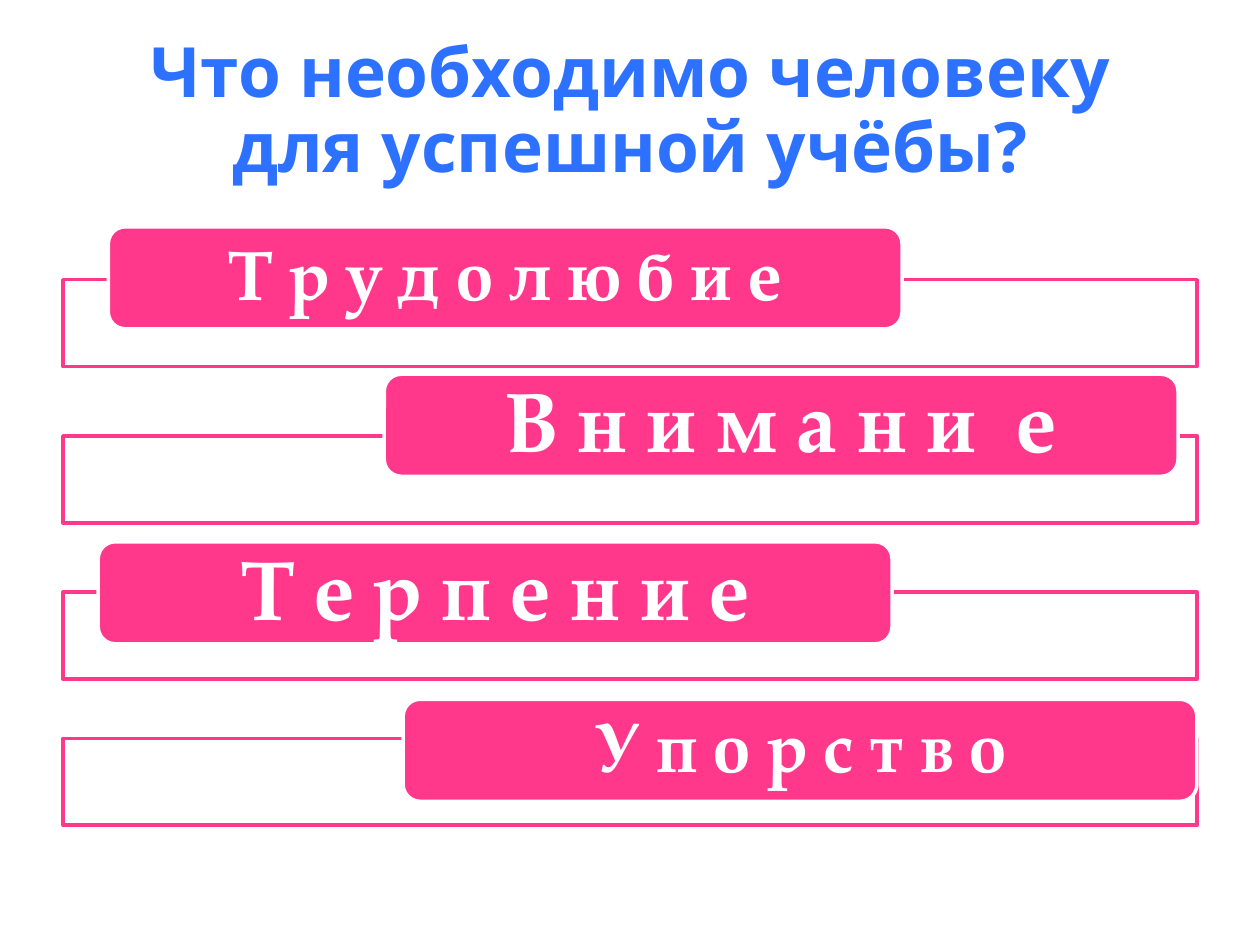
from pptx import Presentation
from pptx.dml.color import RGBColor
from pptx.enum import shapes, text
from pptx.oxml.ns import qn
from pptx.util import Inches, Pt
from lxml import etree

PINK, BLUE, WHITE = "FF388C", "2C71FF", "FFFFFF"
TITLE_FONT, LABEL_FONT = "Noto Sans", "TeX Gyre Pagella"

# label, text size, frame top, label left, label top
QUALITIES = [
    ("Т р у д о л ю б и е", 40, 2.22, 0.86, 1.8),
    ("В н и м а н и  е", 48, 3.46, 3.05, 2.97),
    ("Т е р п е н и е", 48, 4.7, 0.78, 4.3),
    ("У п о р с т в о", 40, 5.86, 3.2, 5.55),
]


def color(hex_value):
    return RGBColor.from_string(hex_value)


def set_opacity(shape, percent):
    fill = shape.fill._xPr.find(qn("a:solidFill"))
    etree.SubElement(fill[0], qn("a:alpha"), val=str(percent * 1000))


def add_box(slide, kind, left, top, width, height, fill, line):
    shape = slide.shapes.add_shape(
        kind, Inches(left), Inches(top), Inches(width), Inches(height))
    shape.shadow.inherit = False
    shape.fill.solid()
    shape.fill.fore_color.rgb = color(fill)
    shape.line.color.rgb = color(line)
    shape.line.width = Pt(2)
    return shape


def write_text(shape, wording, size, font, hex_value, anchor, side_inset=0):
    """Fill a shape with one centred bold paragraph."""
    frame = shape.text_frame
    frame.word_wrap = True
    frame.vertical_anchor = anchor
    frame.margin_left = frame.margin_right = Inches(side_inset)
    frame.margin_top = frame.margin_bottom = 0
    paragraph = frame.paragraphs[0]
    paragraph.alignment = text.PP_ALIGN.CENTER
    paragraph.line_spacing = 0.9
    run = paragraph.add_run()
    run.text = wording
    run.font.size = Pt(size)
    run.font.name = font
    run.font.bold = True
    run.font.color.rgb = color(hex_value)


def add_title(slide, wording):
    box = slide.shapes.add_textbox(
        Inches(0.5), Inches(0.3), Inches(9), Inches(1.25))
    write_text(box, wording, 39.6, TITLE_FONT, BLUE,
               text.MSO_ANCHOR.TOP, side_inset=0.1)


def add_quality(slide, wording, size, frame_top, label_left, label_top):
    """Add an outlined frame with a rounded label over its top edge."""
    frame = add_box(slide, shapes.MSO_SHAPE.RECTANGLE,
                    0.5, frame_top, 9, 0.69, WHITE, PINK)
    set_opacity(frame, 90)
    label = add_box(slide, shapes.MSO_SHAPE.ROUNDED_RECTANGLE,
                    label_left, label_top, 6.3, 0.81, PINK, WHITE)
    write_text(label, wording, size, LABEL_FONT, WHITE,
               text.MSO_ANCHOR.MIDDLE, side_inset=0.2)


def main():
    presentation = Presentation()
    presentation.slide_width = Inches(10)
    presentation.slide_height = Inches(7.5)
    slide = presentation.slides.add_slide(presentation.slide_layouts[6])
    add_title(slide, "Что необходимо человеку для успешной учёбы?")
    for quality in QUALITIES:
        add_quality(slide, *quality)
    presentation.save("out.pptx")


if __name__ == "__main__":
    main()
